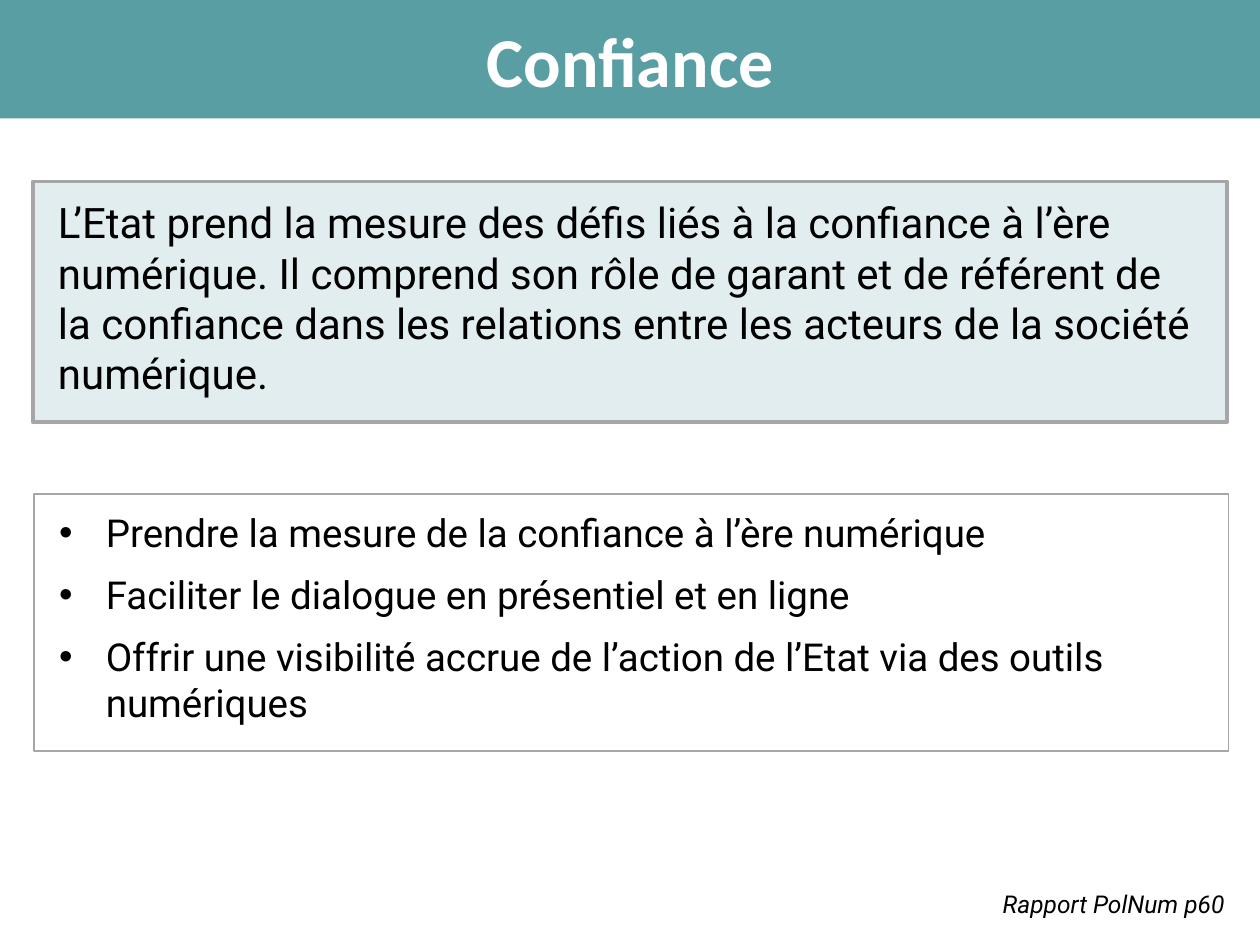
import pptx
import pptx.util
import pptx.dml.color
import pptx.enum.shapes
import pptx.enum.text
import pptx.oxml.ns
import lxml.etree

Inches, Pt = pptx.util.Inches, pptx.util.Pt
Anchor, Align = pptx.enum.text.MSO_ANCHOR, pptx.enum.text.PP_ALIGN
Fit = pptx.enum.text.MSO_AUTO_SIZE
qn = pptx.oxml.ns.qn

COLORS = {"teal": "599EA3", "grey": "A6A6A6", "white": "FFFFFF", "black": "000000"}


def color(name):
    return pptx.dml.color.RGBColor.from_string(COLORS[name])


class Deck:
    def __init__(self):
        self.prs = pptx.Presentation()
        self.prs.slide_width, self.prs.slide_height = Inches(10), Inches(7.5)
        self.slide = self.prs.slides.add_slide(self.prs.slide_layouts[1])

    def place(self, shape, left, top, width, height):
        shape.left, shape.top = Inches(left), Inches(top)
        shape.width, shape.height = Inches(width), Inches(height)

    def pad(self, frame, side, edge, anchor):
        frame.word_wrap = True
        frame.auto_size = Fit.NONE
        frame.vertical_anchor = anchor
        frame.margin_left = frame.margin_right = Inches(side)
        frame.margin_top = frame.margin_bottom = Inches(edge)

    def style(self, par, size, tint="black", face="Roboto", bold=False, slant=False):
        for run in par.runs:
            font = run.font
            font.name, font.size = face, Pt(size)
            font.bold, font.italic = bold, slant
            font.color.rgb = color(tint)

    def border(self, shape, width):
        shape.line.color.rgb = color("grey")
        shape.line.width = Pt(width)

    def title(self, text, *box):
        shape = self.slide.shapes.title
        self.place(shape, *box)
        shape.fill.solid()
        shape.fill.fore_color.rgb = color("teal")
        frame = shape.text_frame
        frame.text = text
        self.pad(frame, 0.1, 0.05, Anchor.MIDDLE)
        frame.paragraphs[0].alignment = Align.CENTER
        self.style(frame.paragraphs[0], 40, "white", "Calibri", bold=True)

    def bullets(self, items, *box):
        shape = self.slide.placeholders[1]
        self.place(shape, *box)
        self.border(shape, 0.75)
        frame = shape.text_frame
        frame.text = "\n".join(items)
        self.pad(frame, 0.2, 0.12, Anchor.TOP)
        for index, par in enumerate(frame.paragraphs):
            props = par._p.get_or_add_pPr()
            props.set("marL", str(Inches(0.37)))
            props.set("indent", str(-Inches(0.37)))
            lxml.etree.SubElement(props, qn("a:buFont")).set("typeface", "Arial")
            lxml.etree.SubElement(props, qn("a:buChar")).set("char", "•")
            par.space_before = Pt(9 if index else 0)
            self.style(par, 22)

    def panel(self, text, *box):
        kind = pptx.enum.shapes.MSO_SHAPE.RECTANGLE
        shape = self.slide.shapes.add_shape(kind, *map(Inches, box))
        shape.shadow.inherit = False
        shape.fill.solid()
        shape.fill.fore_color.rgb = color("teal")
        # Let the white page show through the fill
        tone = shape._element.spPr.find(qn("a:solidFill"))[0]
        lxml.etree.SubElement(tone, qn("a:alpha")).set("val", "18000")
        self.border(shape, 2)
        frame = shape.text_frame
        frame.text = text
        self.pad(frame, 0.2, 0.12, Anchor.TOP)
        frame.paragraphs[0].alignment = Align.LEFT
        self.style(frame.paragraphs[0], 24)

    def note(self, text, *box):
        frame = self.slide.shapes.add_textbox(*map(Inches, box)).text_frame
        frame.text = text
        frame.word_wrap = False
        frame.auto_size = Fit.SHAPE_TO_FIT_TEXT
        self.style(frame.paragraphs[0], 14, slant=True)


def main():
    deck = Deck()

    # Title band
    deck.title("Confiance", 0, 0, 10, 0.94)

    # Actions
    deck.bullets([
        "Prendre la mesure de la confiance à l’ère numérique",
        "Faciliter le dialogue en présentiel et en ligne",
        "Offrir une visibilité accrue de l’action de l’Etat via des outils numériques",
    ], 0.27, 3.92, 9.48, 2.04)

    # Key statement
    deck.panel(
        "L’Etat prend la mesure des défis liés à la confiance à l’ère numérique. "
        "Il comprend son rôle de garant et de référent de la confiance dans les "
        "relations entre les acteurs de la société numérique.",
        0.26, 1.44, 9.48, 1.91)

    # Reference
    deck.note("Rapport PolNum p60", 7.86, 7.01, 2.01, 0.34)

    deck.prs.save("out.pptx")


if __name__ == "__main__":
    main()
